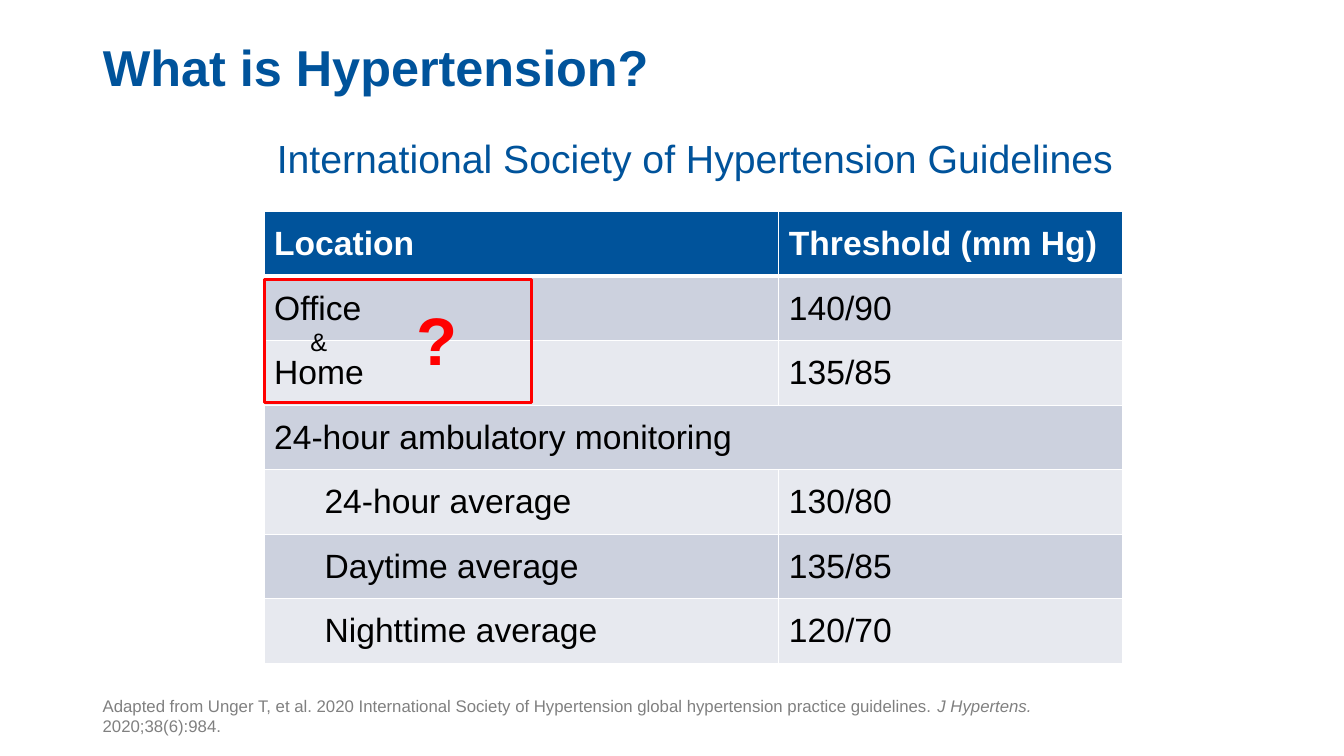
from dataclasses import dataclass

import lxml.etree
import pptx
import pptx.dml.color
import pptx.enum.shapes
import pptx.enum.text
import pptx.oxml.ns
import pptx.util

ALIGN = pptx.enum.text.PP_ALIGN
ANCHOR = pptx.enum.text.MSO_ANCHOR
FIT = pptx.enum.text.MSO_AUTO_SIZE


@dataclass(frozen=True)
class Theme:
    """Colours, type sizes and face of the slide."""
    face: str = "Arial"
    blue: str = "00539B"
    red: str = "FF0000"
    black: str = "000000"
    white: str = "FFFFFF"
    grey: str = "808080"
    bands: tuple = ("CCD1DE", "E7E9EF")
    title: int = 36
    head: int = 28
    cell: int = 24
    join: int = 18
    query: int = 48
    note: int = 12


@dataclass(frozen=True)
class Box:
    """A region measured in inches."""
    left: float
    top: float
    width: float
    height: float

    def inner(self, left, top, width, height):
        """Return the inner box at the given percentages."""
        return Box(self.left + self.width * left / 100,
                   self.top + self.height * top / 100,
                   self.width * width / 100, self.height * height / 100)

    def place(self):
        """Return the lengths in the order that shapes take them."""
        sides = (self.left, self.top, self.width, self.height)
        return [pptx.util.Inches(side) for side in sides]


THEME = Theme()
ROWS = [
    ("Location", "Threshold (mm Hg)", 0),
    ("Office", "140/90", 0),
    ("Home", "135/85", 0),
    ("24-hour ambulatory monitoring", None, 0),
    ("24-hour average", "130/80", 1),
    ("Daytime average", "135/85", 1),
    ("Nighttime average", "120/70", 1),
]
SOURCE = [
    ("Adapted from Unger T, et al. 2020 International Society of Hypertension "
     "global hypertension practice guidelines. ", False),
    ("J Hypertens. ", True),
    ("2020;38(6):984.", False),
]


def rgb(code):
    """Turn a hex code into a colour."""
    return pptx.dml.color.RGBColor.from_string(code)


def style(para, size, color, bold=False):
    """Set the font of a whole paragraph."""
    font = para.font
    font.name = THEME.face
    font.size = pptx.util.Pt(size)
    font.bold = bold
    font.color.rgb = rgb(color)


def label(slide, box, text, size, color, bold=False, wrap=True,
          align=ALIGN.LEFT):
    """Add a one-paragraph text box."""
    frame = slide.shapes.add_textbox(*box.place()).text_frame
    frame.word_wrap = wrap
    frame.auto_size = FIT.SHAPE_TO_FIT_TEXT
    para = frame.paragraphs[0]
    para.text = text
    para.alignment = align
    style(para, size, color, bold)


def title(slide, box):
    """Fill the title placeholder."""
    shape = slide.shapes.title
    shape.left, shape.top, shape.width, shape.height = box.place()
    frame = shape.text_frame
    frame.auto_size = FIT.NONE
    frame.vertical_anchor = ANCHOR.BOTTOM
    para = frame.paragraphs[0]
    para.text = "What is Hypertension?"
    para.alignment = ALIGN.LEFT
    para.line_spacing = 0.9
    style(para, THEME.title, THEME.blue, True)


def border(cell, top, bottom):
    """Draw white rules around a cell, with widths in points."""
    props = cell._tc.get_or_add_tcPr()
    rules = {"lnL": 1, "lnR": 1, "lnT": top, "lnB": bottom}
    for spot, (name, width) in enumerate(rules.items()):
        line = lxml.etree.Element(pptx.oxml.ns.qn(f"a:{name}"),
                                  w=str(pptx.util.Pt(width)))
        fill = lxml.etree.SubElement(line, pptx.oxml.ns.qn("a:solidFill"))
        lxml.etree.SubElement(fill, pptx.oxml.ns.qn("a:srgbClr"),
                              val=THEME.white)
        props.insert(spot, line)


def table(slide, box):
    """Add the table of thresholds."""
    grid = slide.shapes.add_table(len(ROWS), 2, *box.place()).table
    for col, share in zip(grid.columns, (0.6, 0.4)):
        col.width = pptx.util.Inches(box.width * share)
    for at, (place, limit, level) in enumerate(ROWS):
        head = at == 0
        for col, text in enumerate((place, limit)):
            cell = grid.cell(at, col)
            cell.vertical_anchor = ANCHOR.MIDDLE
            cell.fill.solid()
            cell.fill.fore_color.rgb = rgb(
                THEME.blue if head else THEME.bands[(at - 1) % 2])
            border(cell, 3 if at == 1 else 1, 3 if head else 1)
            para = cell.text_frame.paragraphs[0]
            para.text = text or ""
            if level and col == 0:
                para.level = level
                para._p.get_or_add_pPr().set(
                    "marL", str(pptx.util.Inches(level / 2)))
            style(para, THEME.cell, THEME.white if head else THEME.black, head)
        if limit is None:
            grid.cell(at, 0).merge(grid.cell(at, 1))


def mark(slide, box):
    """Frame the office and home rows with a question mark."""
    frame = slide.shapes.add_shape(
        pptx.enum.shapes.MSO_SHAPE.RECTANGLE, *box.place())
    frame.shadow.inherit = False
    frame.fill.background()
    frame.line.color.rgb = rgb(THEME.red)
    frame.line.width = pptx.util.Pt(2.25)
    label(slide, box.inner(13.58, 34.43, 13.96, 32.79), "&",
          THEME.join, THEME.black, wrap=False)
    label(slide, box.inner(53.21, 11.48, 23.02, 74.59), "?",
          THEME.query, THEME.red, bold=True, wrap=False)


def source(slide, box):
    """Add the citation at the foot."""
    frame = slide.shapes.add_textbox(*box.place()).text_frame
    frame.word_wrap = True
    frame.vertical_anchor = ANCHOR.BOTTOM
    para = frame.paragraphs[0]
    for text, slant in SOURCE:
        run = para.add_run()
        run.text = text
        run.font.italic = slant
    style(para, THEME.note, THEME.grey)


def main():
    """Build the slide and save it."""
    deck = pptx.Presentation()
    page = Box(0, 0, 13.33, 7.5)
    deck.slide_width = pptx.util.Inches(page.width)
    deck.slide_height = pptx.util.Inches(page.height)
    slide = deck.slides.add_slide(deck.slide_layouts.get_by_name("Title Only"))
    body = page.inner(19.65, 28, 63.84, 59.73)
    title(slide, page.inner(6.9, 2, 86.27, 11.6))
    table(slide, body)
    label(slide, page.inner(12.53, 17.07, 78.32, 7.6),
          "International Society of Hypertension Guidelines",
          THEME.head, THEME.blue, align=ALIGN.CENTER)
    source(slide, page.inner(6.9, 92.67, 76.59, 5.33))
    mark(slide, body.inner(0, 14.96, 31.14, 27.23))
    deck.save("out.pptx")


if __name__ == "__main__":
    main()
